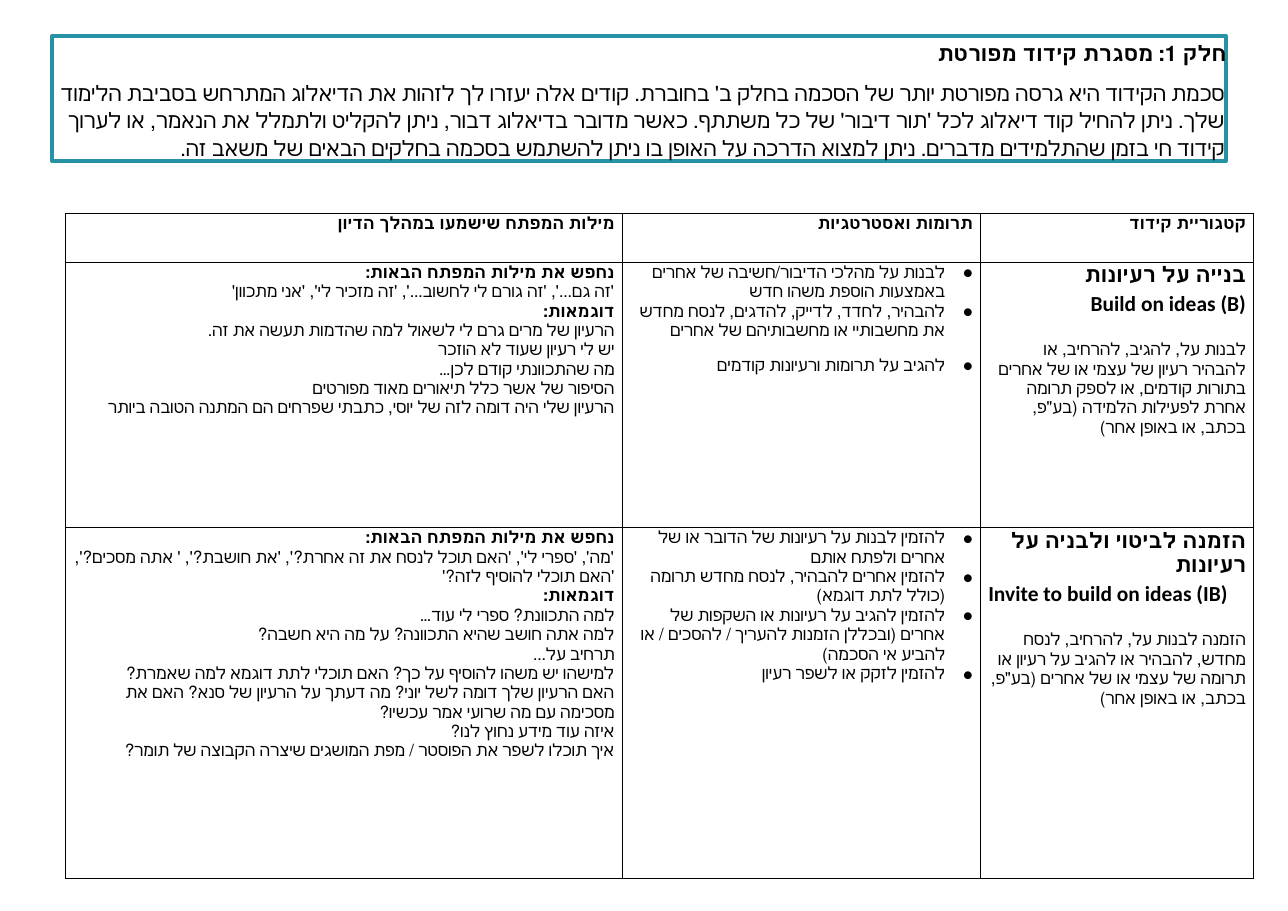
from pptx import Presentation
from pptx import util as u
from pptx.dml.color import RGBColor
from pptx.enum import text
from pptx.oxml import parse_xml
from pptx.oxml.ns import nsdecls

BLACK = RGBColor(0, 0, 0)
TEAL = RGBColor(0x27, 0x91, 0xA6)

HEADING = "חלק 1: מסגרת קידוד מפורטת"
INTRO = (
    "סכמת הקידוד היא גרסה מפורטת יותר של הסכמה בחלק ב' בחוברת. "
    "קודים אלה יעזרו לך לזהות את הדיאלוג המתרחש בסביבת הלימוד שלך. "
    "ניתן להחיל קוד דיאלוג לכל 'תור דיבור' של כל משתתף. "
    "כאשר מדובר בדיאלוג דבור, ניתן להקליט ולתמלל את הנאמר, או לערוך קידוד חי בזמן שהתלמידים מדברים. "
    "ניתן למצוא הדרכה על האופן בו ניתן להשתמש בסכמה בחלקים הבאים של משאב זה."
)
COLUMNS = ["מילות המפתח שישמעו במהלך הדיון", "תרומות ואסטרטגיות", "קטגוריית קידוד"]
KEYWORDS_LABEL = "נחפש את מילות המפתח הבאות:"
EXAMPLES_LABEL = "דוגמאות:"
CATEGORIES = [
    {
        "keywords": "'זה גם...', 'זה גורם לי לחשוב...', 'זה מזכיר לי', 'אני מתכוון'",
        "examples": [
            "הרעיון של מרים גרם לי לשאול למה שהדמות תעשה את זה.",
            "יש לי רעיון שעוד לא הוזכר",
            "מה שהתכוונתי קודם לכן…",
            "הסיפור של אשר כלל תיאורים מאוד מפורטים",
            "הרעיון שלי היה דומה לזה של יוסי, כתבתי שפרחים הם המתנה הטובה ביותר",
        ],
        "strategies": [
            ("לבנות על מהלכי הדיבור/חשיבה של אחרים באמצעות הוספת משהו חדש", 0),
            ("להבהיר, לחדד, לדייק, להדגים, לנסח מחדש את מחשבותיי או מחשבותיהם של אחרים", 0),
            ("להגיב על תרומות ורעיונות קודמים", 10),
        ],
        "name": "בנייה על רעיונות",
        "english": ("Build on ideas (B)", text.PP_ALIGN.RIGHT),
        "summary": "לבנות על, להגיב, להרחיב, או להבהיר רעיון של עצמי או של אחרים בתורות קודמים, "
                   "או לספק תרומה אחרת לפעילות הלמידה (בע\"פ, בכתב, או באופן אחר)",
    },
    {
        "keywords": "'מה', 'ספרי לי', 'האם תוכל לנסח את זה אחרת?', 'את חושבת?', "
                    "' אתה מסכים?', 'האם תוכלי להוסיף לזה?'",
        "examples": [
            "למה התכוונת? ספרי לי עוד…",
            "למה אתה חושב שהיא התכוונה? על מה היא חשבה?",
            "תרחיב על...",
            "למישהו יש משהו להוסיף על כך? האם תוכלי לתת דוגמא למה שאמרת?",
            "האם הרעיון שלך דומה לשל יוני? מה דעתך על הרעיון של סנא? "
            "האם את מסכימה עם מה שרועי אמר עכשיו?",
            "איזה עוד מידע נחוץ לנו?",
            "איך תוכלו לשפר את הפוסטר / מפת המושגים שיצרה הקבוצה של תומר?",
        ],
        "strategies": [
            ("להזמין לבנות על רעיונות של הדובר או של אחרים ולפתח אותם", 0),
            ("להזמין אחרים להבהיר, לנסח מחדש תרומה (כולל לתת דוגמא)", 0),
            ("להזמין להגיב על רעיונות או השקפות של אחרים "
             "(ובכללן הזמנות להעריך / להסכים / או להביע אי הסכמה)", 0),
            ("להזמין לזקק או לשפר רעיון", 0),
        ],
        "name": "הזמנה לביטוי ולבניה על רעיונות",
        "english": ("Invite to build on ideas (IB)", text.PP_ALIGN.LEFT),
        "summary": "הזמנה לבנות על, להרחיב, לנסח מחדש, להבהיר או להגיב על רעיון או תרומה "
                   "של עצמי או של אחרים (בע\"פ, בכתב, או באופן אחר)",
    },
]
COL_WIDTHS = [5.06, 3.25, 2.48]
ROW_HEIGHTS = [0.44, 2.41, 3.19]


def line(words, size=11, bold=False, before=0, bullet=False, rtl=True,
         align=text.PP_ALIGN.RIGHT, font="Calibri", spacing=1.15):
    return dict(words=words, size=size, bold=bold, before=before, bullet=bullet,
                rtl=rtl, align=align, font=font, spacing=spacing)


def write(tf, lines):
    tf.text = "\n".join(item["words"] for item in lines)
    for p, item in zip(tf.paragraphs, lines):
        p.alignment = item["align"]
        p.line_spacing = item["spacing"]
        p.space_before = u.Pt(item["before"])
        pPr = p._p.get_or_add_pPr()
        pPr.set("rtl", "1" if item["rtl"] else "0")
        if item["bullet"]:
            pPr.set("marL", str(u.Inches(0.25)))
            pPr.set("indent", str(u.Inches(-0.25)))
            pPr.append(parse_xml(f'<a:buClr {nsdecls("a")}><a:srgbClr val="{BLACK}"/></a:buClr>'))
            pPr.append(parse_xml(f'<a:buFont {nsdecls("a")} typeface="Calibri"/>'))
            pPr.append(parse_xml(f'<a:buChar {nsdecls("a")} char="●"/>'))
        for r in p.runs:
            r.font.size = u.Pt(item["size"])
            r.font.bold = item["bold"]
            r.font.color.rgb = BLACK
            r.font.name = item["font"]


def category_row(cat):
    english, align = cat["english"]
    return [
        [line(KEYWORDS_LABEL, bold=True), line(cat["keywords"]), line(EXAMPLES_LABEL, bold=True)]
        + [line(example) for example in cat["examples"]],
        [line(words, before=gap, bullet=True) for words, gap in cat["strategies"]],
        [line(cat["name"], 14, True), line(english, 14, True, rtl=False, align=align),
         line(cat["summary"], before=15)],
    ]


def style_cell(cell):
    cell.margin_left = cell.margin_right = u.Inches(0.07)
    cell.margin_top = cell.margin_bottom = 0
    tcPr = cell._tc.get_or_add_tcPr()
    for side in ("lnL", "lnR", "lnT", "lnB"):
        tcPr.append(parse_xml(
            f'<a:{side} {nsdecls("a")} w="{u.Pt(0.75)}"><a:solidFill>'
            f'<a:srgbClr val="{BLACK}"/></a:solidFill></a:{side}>'))
    cell.fill.background()


prs = Presentation()
prs.slide_width, prs.slide_height = u.Inches(11.69), u.Inches(8.27)
s = prs.slides.add_slide(prs.slide_layouts[5])

sp = s.shapes.title
sp.left, sp.top, sp.width, sp.height = map(u.Inches, (0.47, 0.33, 10.66, 1.13))
sp.line.color.rgb = TEAL
sp.line.width = u.Pt(2.5)
tf = sp.text_frame
tf.word_wrap = True
tf.auto_size = text.MSO_AUTO_SIZE.NONE
tf.vertical_anchor = text.MSO_ANCHOR.TOP
tf.margin_left = tf.margin_right = tf.margin_bottom = 0
tf.margin_top = u.Inches(0.02)
write(tf, [line(HEADING, 14, True, font="Roboto", spacing=1.07),
           line(INTRO, 14, before=8, font="Roboto", spacing=1.07)])

rows = [[[line(name, bold=True)] for name in COLUMNS]] + [category_row(c) for c in CATEGORIES]
table = s.shapes.add_table(
    len(rows), len(COLUMNS), u.Inches(0.59), u.Inches(1.94),
    u.Inches(sum(COL_WIDTHS)), u.Inches(sum(ROW_HEIGHTS))).table
table.first_row = table.horz_banding = False
for column, width in zip(table.columns, COL_WIDTHS):
    column.width = u.Inches(width)
for row, height, contents in zip(table.rows, ROW_HEIGHTS, rows):
    row.height = u.Inches(height)
    for cell, lines in zip(row.cells, contents):
        style_cell(cell)
        write(cell.text_frame, lines)

prs.save("out.pptx")
